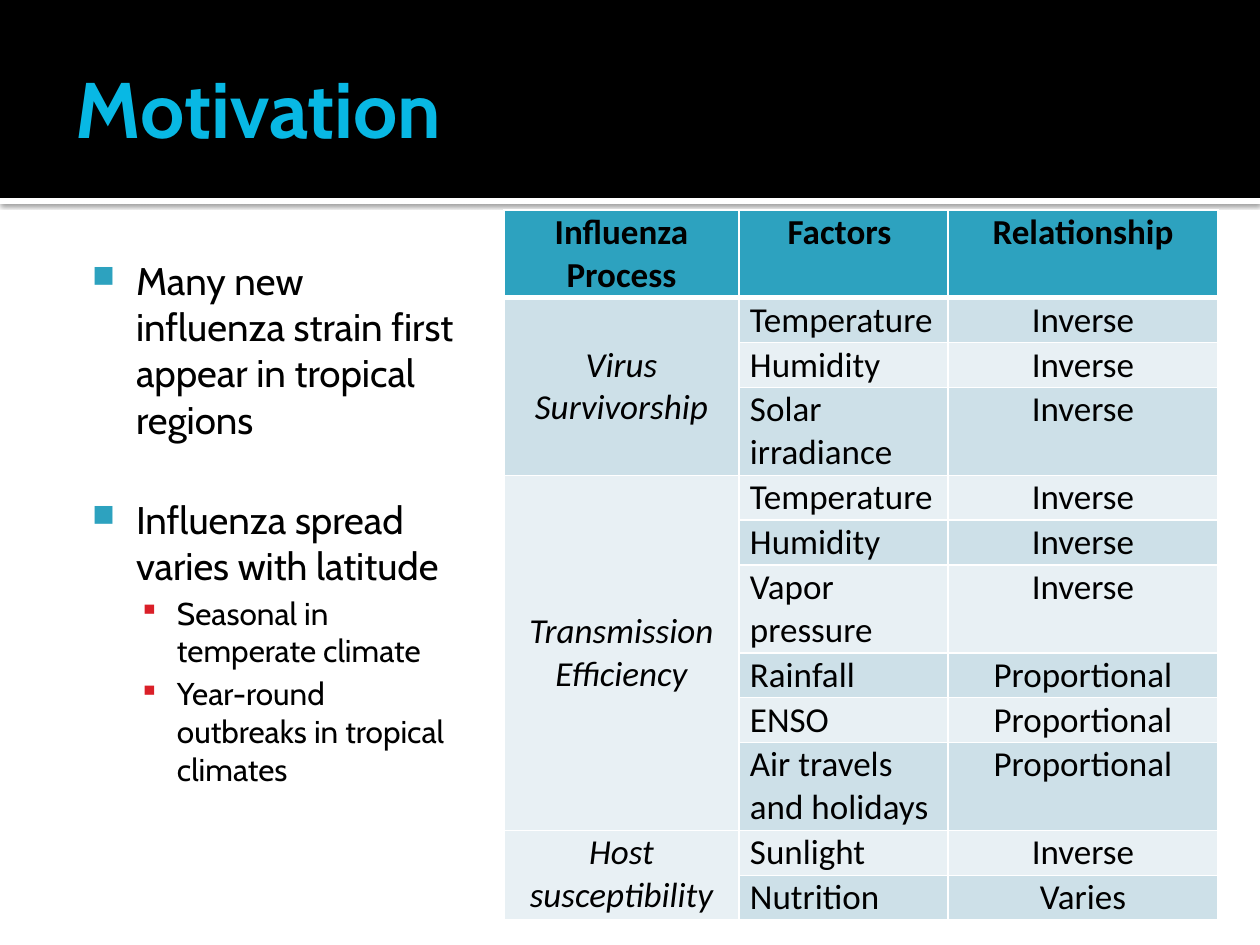
import pptx
import pptx.dml.color
import pptx.enum.shapes
import pptx.enum.text
import pptx.oxml
import pptx.oxml.ns
import pptx.util
from dataclasses import dataclass
from lxml import etree

ALIGN = pptx.enum.text.PP_ALIGN
ANCHOR = pptx.enum.text.MSO_ANCHOR
EMU_PER_PX = 914400 / 126


@dataclass(frozen=True)
class Theme:
    heading_font: str = "Cabin"
    table_font: str = "Calibri"
    title_size: int = 45
    body_size: int = 22
    detail_size: int = 18
    table_size: int = 20
    black: str = "000000"
    white: str = "FFFFFF"
    title: str = "08B8E4"
    accent: str = "2DA2BF"
    detail_bullet: str = "DA1F28"
    dark_row: str = "CDE0E8"
    light_row: str = "E8F0F4"


def px(length):
    return pptx.util.Emu(round(length * EMU_PER_PX))


def rgb(color):
    return pptx.dml.color.RGBColor.from_string(color)


def apply(target, values):
    for name, value in values.items():
        setattr(target, name, value)


def add_xml(parent, tag, **attributes):
    return etree.SubElement(parent, pptx.oxml.ns.qn(tag), **attributes)


class SlideBuilder:
    def __init__(self, presentation, theme):
        self.theme = theme
        self.slide = presentation.slides.add_slide(presentation.slide_layouts[5])

    def add_text(self, paragraph, text, font, size, color, **styles):
        run = paragraph.add_run()
        run.text = text
        apply(run.font, {"name": font, "size": pptx.util.Pt(size), **styles})
        run.font.color.rgb = rgb(color)

    def frame(self, shape, box, margins, anchor):
        apply(shape, dict(zip(("left", "top", "width", "height"), map(px, box))))
        sides = ("margin_left", "margin_top", "margin_right", "margin_bottom")
        text_frame = shape.text_frame
        apply(text_frame, {"word_wrap": True, "vertical_anchor": anchor,
                           "auto_size": pptx.enum.text.MSO_AUTO_SIZE.NONE,
                           **dict(zip(sides, map(px, margins)))})
        return text_frame

    def band(self, box, color, shadow=False):
        shape = self.slide.shapes.add_shape(
            pptx.enum.shapes.MSO_SHAPE.RECTANGLE, *map(px, box))
        shape.shadow.inherit = False
        shape.fill.solid()
        shape.fill.fore_color.rgb = rgb(color)
        shape.line.fill.background()
        if shadow:
            effects = shape._element.spPr.find(pptx.oxml.ns.qn("a:effectLst"))
            outer = add_xml(effects, "a:outerShdw", blurRad="31750", dist="10160",
                            dir="5400000", algn="tl", rotWithShape="0")
            shade = add_xml(outer, "a:srgbClr", val=self.theme.black)
            add_xml(shade, "a:alpha", val="60000")

    def title(self, text, box):
        shape = self.slide.shapes.title
        self.slide.shapes._spTree.append(shape._element)  # in front of the bands
        text_frame = self.frame(shape, box, (13, 6, 6, 6), ANCHOR.MIDDLE)
        paragraph = text_frame.paragraphs[0]
        paragraph.alignment = ALIGN.LEFT
        self.add_text(paragraph, text, self.theme.heading_font, self.theme.title_size,
                      self.theme.title, bold=True)

    def bullets(self, items, box):
        theme = self.theme
        # level: text size, left margin, hanging indent, character, colour, percent
        levels = [(theme.body_size, 60, 44, "■", theme.accent, 80),
                  (theme.detail_size, 101, 38, "▪", theme.detail_bullet, 90)]
        shape = self.slide.shapes.add_textbox(*map(px, box))
        text_frame = self.frame(shape, box, (13, 13, 13, 6), ANCHOR.TOP)
        for index, (level, space, text) in enumerate(items):
            size, margin, hanging, character, color, percent = levels[level]
            paragraph = text_frame.add_paragraph() if index else text_frame.paragraphs[0]
            apply(paragraph, {"level": level, "alignment": ALIGN.LEFT,
                              "space_before": pptx.util.Pt(space)})
            properties = paragraph._p.get_or_add_pPr()
            properties.set("marL", str(px(margin)))
            properties.set("indent", str(-px(hanging)))
            add_xml(add_xml(properties, "a:buClr"), "a:srgbClr", val=color)
            add_xml(properties, "a:buSzPct", val=str(percent * 1000))
            add_xml(properties, "a:buChar", char=character)
            self.add_text(paragraph, text, theme.heading_font, size, theme.black)

    def cell(self, cell, text, fill, align, anchor, borders, **styles):
        apply(cell, {"margin_left": px(11), "margin_right": px(11),
                     "margin_top": px(1), "margin_bottom": px(1),
                     "vertical_anchor": anchor})
        properties = cell._tc.get_or_add_tcPr()
        for side, points in zip("LRTB", borders):
            line = add_xml(properties, f"a:ln{side}", w=str(pptx.util.Pt(points)))
            add_xml(add_xml(line, "a:solidFill"), "a:srgbClr", val=self.theme.white)
        cell.fill.solid()
        cell.fill.fore_color.rgb = rgb(fill)
        if text:
            paragraph = cell.text_frame.paragraphs[0]
            paragraph.alignment = align
            self.add_text(paragraph, text, self.theme.table_font, self.theme.table_size,
                          self.theme.black, **styles)

    def table(self, header, groups, corner, widths, line_heights):
        theme = self.theme
        rows = [(process if index == 0 else "", factor, relation)
                for process, factors in groups
                for index, (factor, relation) in enumerate(factors)]
        heights = [line_heights[1]] + [line_heights[len(row[1].split()) > 1] for row in rows]
        table = self.slide.shapes.add_table(
            len(heights), len(widths), *map(px, (*corner, sum(widths), sum(heights)))).table
        apply(table, {"first_row": True, "horz_banding": False})
        for column, width in zip(table.columns, widths):
            column.width = px(width)
        for row, height in zip(table.rows, heights):
            row.height = px(height)

        # Header row
        for column, text in enumerate(header):
            self.cell(table.cell(0, column), text, theme.accent, ALIGN.CENTER,
                      ANCHOR.TOP, (1, 1, 1, 3), bold=True)

        # Body rows, shaded by turns
        for number, texts in enumerate(rows, 1):
            fill = theme.dark_row if number % 2 else theme.light_row
            for column, text in enumerate(texts):
                self.cell(table.cell(number, column), text, fill,
                          ALIGN.LEFT if column == 1 else ALIGN.CENTER,
                          ANCHOR.TOP, (1, 1, 3 if number == 1 else 1, 1),
                          italic=column == 0)

        # One process cell per group
        first = 1
        for _, factors in groups:
            last = first + len(factors) - 1
            table.cell(first, 0).merge(table.cell(last, 0))
            if len(factors) > 2:
                table.cell(first, 0).vertical_anchor = ANCHOR.MIDDLE
            first = last + 1


def main():
    theme = Theme()
    presentation = pptx.Presentation()
    apply(presentation, {"slide_width": px(1260), "slide_height": px(945)})
    builder = SlideBuilder(presentation, theme)

    # Title bands
    builder.band((0, 198, 1260, 6), theme.white, shadow=True)
    builder.band((0, 0, 1260, 198), theme.black)
    builder.title("Motivation", (63, 21, 1134, 173))

    # Key points: level, space before, text
    builder.bullets([
        (0, 0, "Many new influenza strain first appear in tropical regions"),
        (0, 31, "Influenza spread varies with latitude"),
        (1, 3, "Seasonal in temperate climate"),
        (1, 3, "Year-round outbreaks in tropical climates"),
    ], (63, 244, 410, 638))

    # Factors by influenza process
    builder.table(
        ("Influenza Process", "Factors ", "Relationship"),
        [("Virus Survivorship", [("Temperature", "Inverse"), ("Humidity", "Inverse"),
                                 ("Solar irradiance", "Inverse")]),
         ("Transmission Efficiency", [("Temperature", "Inverse"), ("Humidity", "Inverse"),
                                      ("Vapor pressure", "Inverse"),
                                      ("Rainfall", "Proportional"),
                                      ("ENSO", "Proportional"),
                                      ("Air travels and holidays", "Proportional")]),
         ("Host susceptibility", [("Sunlight", "Inverse"), ("Nutrition", "Varies")])],
        corner=(504, 210), widths=(235, 209, 270), line_heights=(44, 87))

    presentation.save("out.pptx")


if __name__ == "__main__":
    main()
